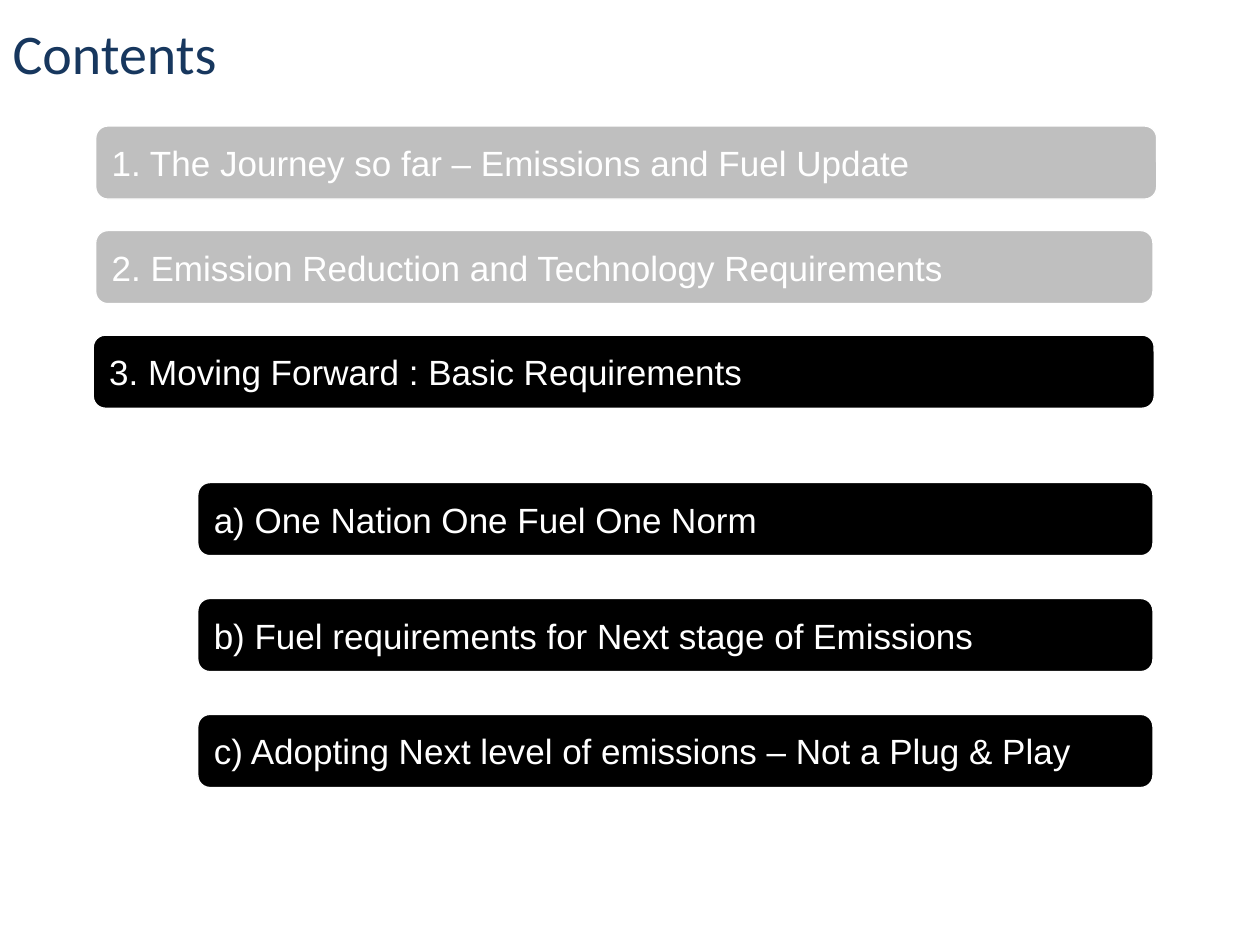
from dataclasses import dataclass

from pptx import Presentation
from pptx.dml.color import RGBColor
from pptx.enum.shapes import MSO_SHAPE
from pptx.enum.text import MSO_ANCHOR, PP_ALIGN
from pptx.util import Inches, Pt

BAR_SHAPE = MSO_SHAPE.FLOWCHART_ALTERNATE_PROCESS
MIDDLE = MSO_ANCHOR.MIDDLE
LEFT = PP_ALIGN.LEFT
TITLE_ONLY = 5


@dataclass(frozen=True)
class Theme:
    navy: RGBColor = RGBColor(0x17, 0x37, 0x5E)
    white: RGBColor = RGBColor(0xFF, 0xFF, 0xFF)
    active: RGBColor = RGBColor(0x00, 0x00, 0x00)
    done: RGBColor = RGBColor(0xBF, 0xBF, 0xBF)
    title_font: str = "Calibri"
    bar_font: str = "Arial"
    title_size: Pt = Pt(32)
    bar_size: Pt = Pt(20)
    outline: Pt = Pt(0.75)


THEME = Theme()
BAR_HEIGHT = 0.58

# Each bar: text, fill, left, width
CHAPTERS = [
    ("1. The Journey so far – Emissions and Fuel Update", THEME.done, 0.76, 8.42),
    ("2. Emission Reduction and Technology Requirements", THEME.done, 0.76, 8.39),
    ("3. Moving Forward : Basic Requirements", THEME.active, 0.74, 8.42),
]
TOPICS = [
    (text, THEME.active, 1.57, 7.58)
    for text in (
        "a) One Nation One Fuel One Norm",
        "b) Fuel requirements for Next stage of Emissions",
        "c) Adopting Next level of emissions – Not a Plug & Play",
    )
]


def write_text(shape, text, wrap, font_format):
    frame = shape.text_frame
    frame.word_wrap = wrap
    frame.vertical_anchor = MIDDLE
    para = frame.paragraphs[0]
    para.alignment = LEFT
    span = para.add_run()
    span.text = text
    color = font_format["color"]
    span.font.color.rgb = color
    for name in ("name", "size"):
        setattr(span.font, name, font_format[name])


def place_title(page, text, left, top, width, height):
    title = page.shapes.title
    box = {"left": left, "top": top, "width": width, "height": height}
    for name, value in box.items():
        setattr(title, name, Inches(value))
    write_text(title, text, True, {
        "name": THEME.title_font, "size": THEME.title_size, "color": THEME.navy,
    })


def place_bar(page, text, fill, left, top, width, height):
    bar = page.shapes.add_shape(
        BAR_SHAPE, Inches(left), Inches(top), Inches(width), Inches(height))
    bar.shadow.inherit = False
    bar.fill.solid()
    bar.fill.fore_color.rgb = fill
    bar.line.color.rgb = THEME.white
    bar.line.width = THEME.outline
    write_text(bar, text, False, {
        "name": THEME.bar_font, "size": THEME.bar_size, "color": THEME.white,
    })


def place_bars(page, bars, top, pitch):
    """Stack bars downward, with tops one pitch apart."""
    for index, (text, fill, left, width) in enumerate(bars):
        place_bar(page, text, fill, left, top + index * pitch, width, BAR_HEIGHT)


def main():
    deck = Presentation()
    deck.slide_width, deck.slide_height = Inches(10), Inches(7.5)
    page = deck.slides.add_slide(deck.slide_layouts[TITLE_ONLY])
    place_title(page, "Contents", 0, 0, 10, 0.83)
    place_bars(page, CHAPTERS, top=1, pitch=0.83)
    place_bars(page, TOPICS, top=3.83, pitch=0.92)
    deck.save("out.pptx")


if __name__ == "__main__":
    main()
